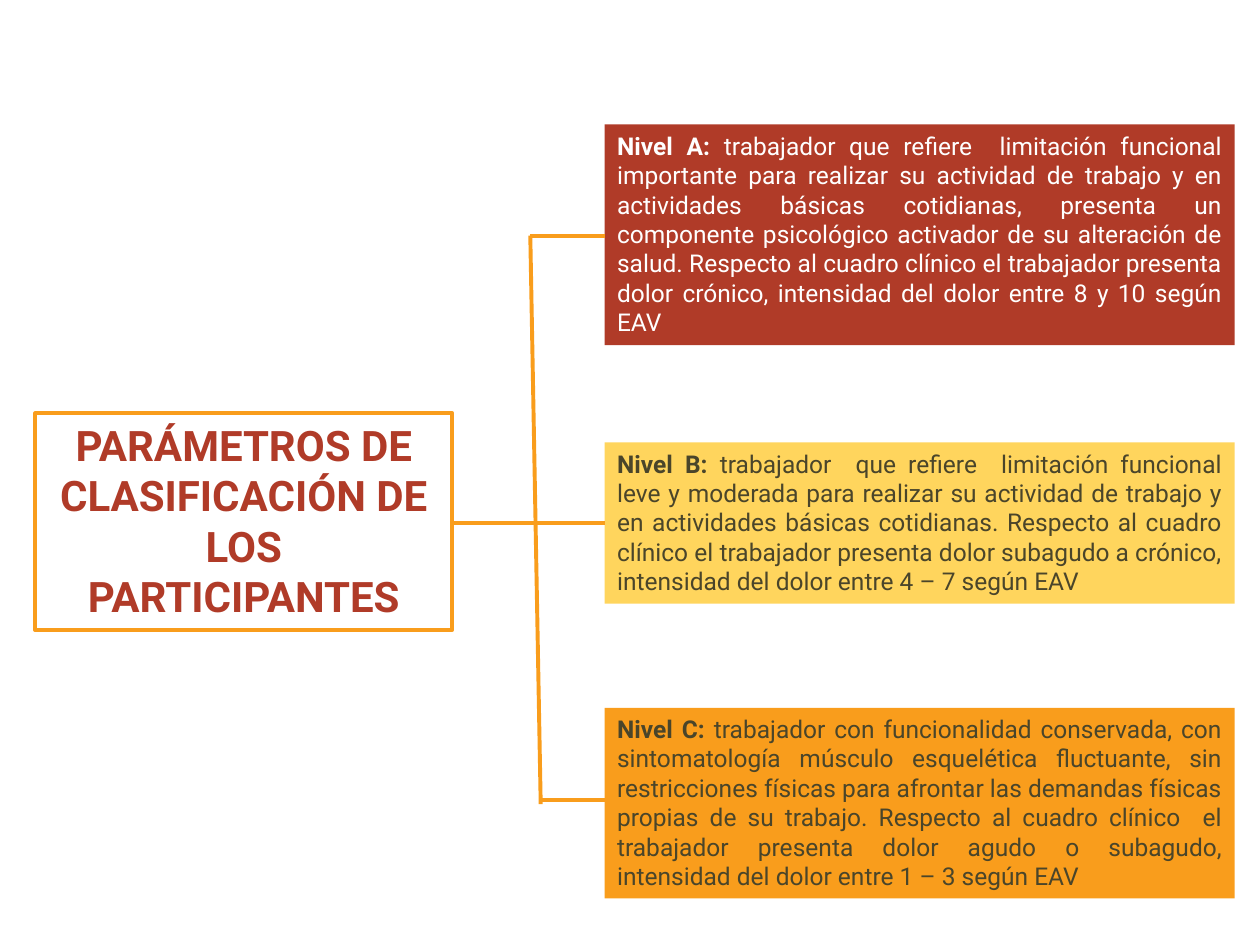
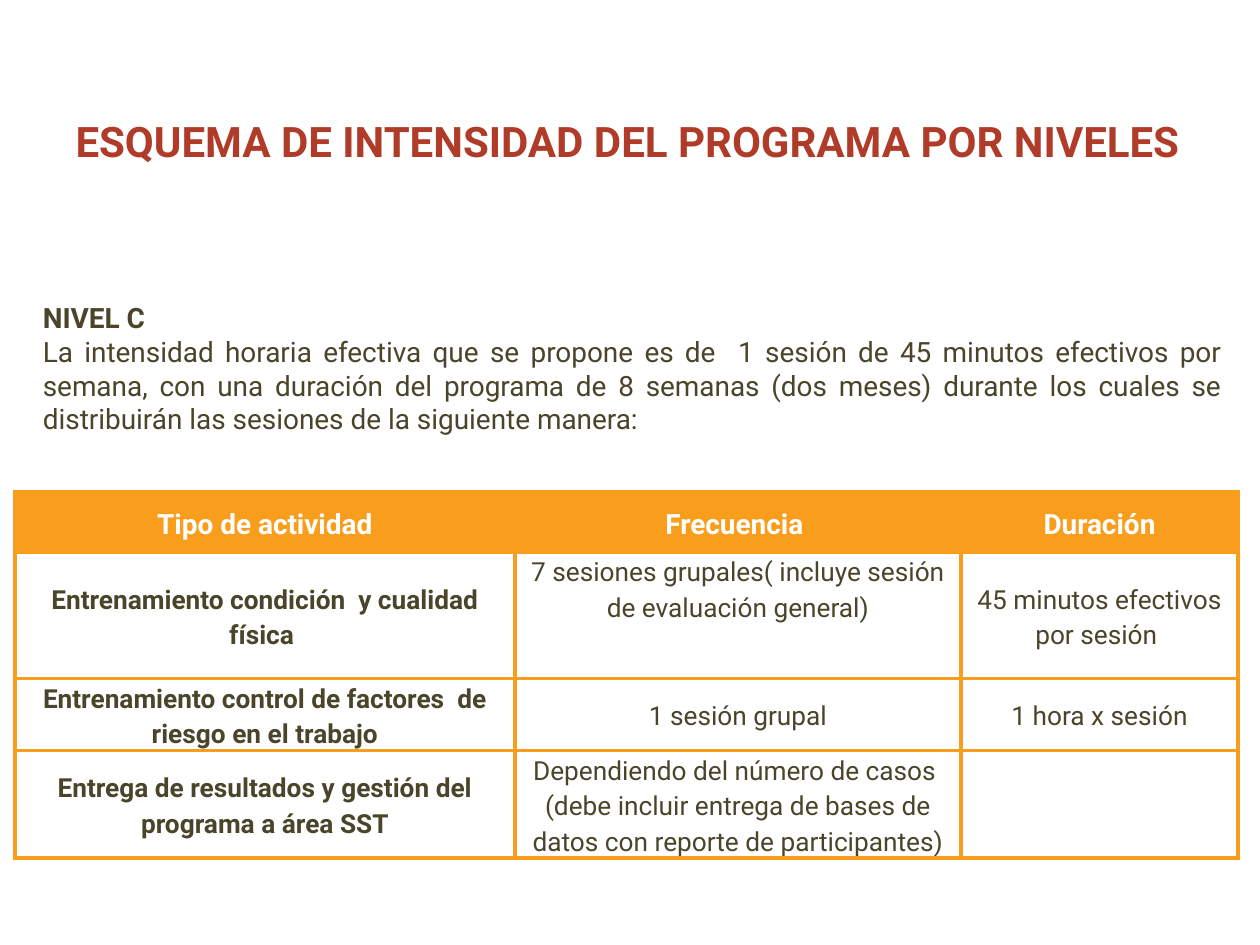
"""Builds two slides on participant levels and programme intensity."""
from dataclasses import dataclass

from lxml import etree
from pptx import Presentation
from pptx import util as u
from pptx.dml.color import RGBColor
from pptx.enum import shapes, text
from pptx.oxml.ns import qn

COLORS = {
    "red": "B03B28",
    "yellow": "FFD55D",
    "orange": "F99D1C",
    "olive": "4A452A",
    "white": "FFFFFF",
}
FONT = "Roboto"
LINE_WIDTH = u.Pt(2.25)
CENTER = text.PP_ALIGN.CENTER
JUSTIFY = text.PP_ALIGN.JUSTIFY
TOP = text.MSO_ANCHOR.TOP
MIDDLE = text.MSO_ANCHOR.MIDDLE


@dataclass(frozen=True)
class Box:
    left: float
    top: float
    width: float
    height: float

    def lengths(self) -> tuple:
        return tuple(u.Cm(v) for v in (self.left, self.top, self.width, self.height))


@dataclass(frozen=True)
class Level:
    name: str
    description: str
    top: float
    height: float
    fill: str
    color: str


@dataclass(frozen=True)
class Line:
    x1: float
    y1: float
    x2: float
    y2: float


@dataclass(frozen=True)
class Activity:
    name: str
    frequency: str
    duration: str
    height: float
    frequency_anchor: text.MSO_ANCHOR = MIDDLE


LEVELS = [
    Level(
        "Nivel A: ",
        "trabajador que refiere  limitación funcional importante para realizar su "
        "actividad de trabajo y en actividades básicas cotidianas, presenta un "
        "componente psicológico activador de su alteración de salud. Respecto al "
        "cuadro clínico el trabajador presenta dolor crónico, intensidad del dolor "
        "entre 8 y 10 según EAV",
        2.51, 4.45, "red", "white",
    ),
    Level(
        "Nivel B: ",
        "trabajador  que refiere  limitación funcional leve y moderada para realizar "
        "su actividad de trabajo y en actividades básicas cotidianas. Respecto al "
        "cuadro clínico el trabajador presenta dolor subagudo a crónico, intensidad "
        "del dolor entre 4 – 7 según EAV",
        8.92, 3.25, "yellow", "olive",
    ),
    Level(
        "Nivel C: ",
        "trabajador con funcionalidad conservada, con sintomatología músculo "
        "esquelética fluctuante, sin restricciones físicas para afrontar las demandas "
        "físicas propias de su trabajo. Respecto al cuadro clínico  el trabajador "
        "presenta dolor agudo o subagudo, intensidad del dolor entre 1 – 3 según EAV",
        14.27, 3.84, "orange", "olive",
    ),
]
LEVEL_LEFT = 12.19
LEVEL_WIDTH = 12.7
BRACKET = [
    Line(10.69, 4.75, 10.9, 16.21),
    Line(LEVEL_LEFT, 4.75, 10.69, 4.75),
    Line(12.42, 16.13, 10.92, 16.13),
    Line(LEVEL_LEFT, 10.54, 9.09, 10.54),
]

HEADINGS = ["Tipo de actividad", "Frecuencia ", "Duración"]
HEADING_HEIGHT = 1.23
COLUMN_WIDTHS = [10.08, 8.99, 5.59]
ACTIVITIES = [
    Activity(
        "Entrenamiento condición  y cualidad física ",
        "7 sesiones grupales( incluye sesión de evaluación general)",
        "45 minutos efectivos por sesión ",
        2.54, TOP,
    ),
    Activity(
        "Entrenamiento control de factores  de riesgo en el trabajo",
        "1 sesión grupal", "1 hora x sesión", 1.45,
    ),
    Activity(
        "Entrega de resultados y gestión del programa a área SST",
        "Dependiendo del número de casos  (debe incluir entrega de bases de datos "
        "con reporte de participantes)",
        "", 2.17,
    ),
]


def rgb(name: str) -> RGBColor:
    return RGBColor.from_string(COLORS[name])


def add_run(paragraph, words: str, size: float, color: str, bold: bool = False) -> None:
    run = paragraph.add_run()
    run.text = words
    run.font.name = FONT
    run.font.size = u.Pt(size)
    run.font.bold = bold
    run.font.color.rgb = rgb(color)


def prepare_frame(shape, anchor: text.MSO_ANCHOR = TOP):
    frame = shape.text_frame
    frame.word_wrap = True
    frame.auto_size = text.MSO_AUTO_SIZE.NONE
    frame.vertical_anchor = anchor
    return frame


def place(shape, box: Box) -> None:
    shape.left, shape.top, shape.width, shape.height = box.lengths()


def set_title(slide, words: str, box: Box):
    title = slide.shapes.title
    place(title, box)
    paragraph = prepare_frame(title).paragraphs[0]
    paragraph.alignment = CENTER
    add_run(paragraph, words, 24, "red", True)
    return title


def add_level(slide, level: Level) -> None:
    box = Box(LEVEL_LEFT, level.top, LEVEL_WIDTH, level.height)
    shape = slide.shapes.add_shape(shapes.MSO_SHAPE.RECTANGLE, *box.lengths())
    shape.shadow.inherit = False
    shape.fill.solid()
    shape.fill.fore_color.rgb = rgb(level.fill)
    shape.line.fill.background()
    paragraph = prepare_frame(shape).paragraphs[0]
    paragraph.alignment = JUSTIFY
    add_run(paragraph, level.name, 14, level.color, True)
    add_run(paragraph, level.description, 14, level.color)


def add_line(slide, line: Line) -> None:
    ends = [u.Cm(v) for v in (line.x1, line.y1, line.x2, line.y2)]
    connector = slide.shapes.add_connector(shapes.MSO_CONNECTOR.STRAIGHT, *ends)
    connector.line.color.rgb = rgb("orange")
    connector.line.width = LINE_WIDTH
    etree.SubElement(connector._element.spPr, qn("a:effectLst"))


def set_borders(cell) -> None:
    properties = cell._tc.get_or_add_tcPr()
    for position, side in enumerate(("lnL", "lnR", "lnT", "lnB")):
        border = etree.Element(qn(f"a:{side}"), w=str(int(LINE_WIDTH)))
        fill = etree.SubElement(border, qn("a:solidFill"))
        etree.SubElement(fill, qn("a:srgbClr"), val=COLORS["orange"])
        properties.insert(position, border)


def fill_cell(cell, words: str, size: float, color: str, fill: str,
              bold: bool, anchor: text.MSO_ANCHOR = MIDDLE) -> None:
    cell.fill.solid()
    cell.fill.fore_color.rgb = rgb(fill)
    set_borders(cell)
    cell.vertical_anchor = anchor
    cell.margin_left = cell.margin_right = u.Cm(0.18)
    cell.margin_top = cell.margin_bottom = 0
    if words:
        paragraph = cell.text_frame.paragraphs[0]
        paragraph.alignment = CENTER
        paragraph.line_spacing = 1.15
        paragraph.space_after = u.Pt(10)
        add_run(paragraph, words, size, color, bold)


def add_activity_table(slide) -> None:
    heights = [HEADING_HEIGHT] + [activity.height for activity in ACTIVITIES]
    box = Box(0.3, 9.91, sum(COLUMN_WIDTHS), sum(heights))
    table = slide.shapes.add_table(
        len(heights), len(COLUMN_WIDTHS), *box.lengths()).table
    table.first_row = table.horz_banding = False
    for column, width in zip(table.columns, COLUMN_WIDTHS):
        column.width = u.Cm(width)
    for row, height in zip(table.rows, heights):
        row.height = u.Cm(height)
    for column, heading in enumerate(HEADINGS):
        fill_cell(table.cell(0, column), heading, 16, "white", "orange", True)
    for row, activity in enumerate(ACTIVITIES, start=1):
        fill_cell(table.cell(row, 0), activity.name, 15, "olive", "white", True)
        fill_cell(table.cell(row, 1), activity.frequency, 15, "olive", "white",
                  False, activity.frequency_anchor)
        fill_cell(table.cell(row, 2), activity.duration, 15, "olive", "white", False)


def set_body(slide, box: Box, heading: str, description: str) -> None:
    body = slide.placeholders[1]
    place(body, box)
    frame = prepare_frame(body)
    for paragraph, words, bold in (
        (frame.paragraphs[0], heading, True),
        (frame.add_paragraph(), description, False),
    ):
        properties = paragraph._p.get_or_add_pPr()
        properties.set("marL", "0")
        properties.set("indent", "0")
        etree.SubElement(properties, qn("a:buNone"))
        paragraph.alignment = JUSTIFY
        paragraph.space_before = u.Pt(0)
        add_run(paragraph, words, 16, "olive", bold)


def build_levels_slide(presentation) -> None:
    slide = presentation.slides.add_slide(presentation.slide_layouts[5])
    title = set_title(slide, "PARÁMETROS DE CLASIFICACIÓN DE LOS PARTICIPANTES",
                      Box(0.71, 8.33, 8.41, 4.37))
    title.fill.solid()
    title.fill.fore_color.rgb = rgb("white")
    title.line.color.rgb = rgb("orange")
    title.line.width = LINE_WIDTH
    for level in LEVELS:
        add_level(slide, level)
    for line in BRACKET:
        add_line(slide, line)


def build_intensity_slide(presentation) -> None:
    slide = presentation.slides.add_slide(presentation.slide_layouts[1])
    title = set_title(slide, "ESQUEMA DE INTENSIDAD DEL PROGRAMA POR NIVELES",
                      Box(0.1, 1.73, 25.1, 1.57))
    title.text_frame.paragraphs[0].line_spacing = u.Pt(42)
    set_body(
        slide, Box(0.61, 5.94, 24.28, 3), "NIVEL C",
        "La intensidad horaria efectiva que se propone es de  1 sesión de 45 minutos "
        "efectivos por semana, con una duración del programa de 8 semanas (dos meses) "
        "durante los cuales se distribuirán las sesiones de la siguiente manera:",
    )
    add_activity_table(slide)


def main() -> None:
    presentation = Presentation()
    presentation.slide_width = u.Cm(25.4)
    presentation.slide_height = u.Cm(19.05)
    build_levels_slide(presentation)
    build_intensity_slide(presentation)
    presentation.save("out.pptx")


if __name__ == "__main__":
    main()
